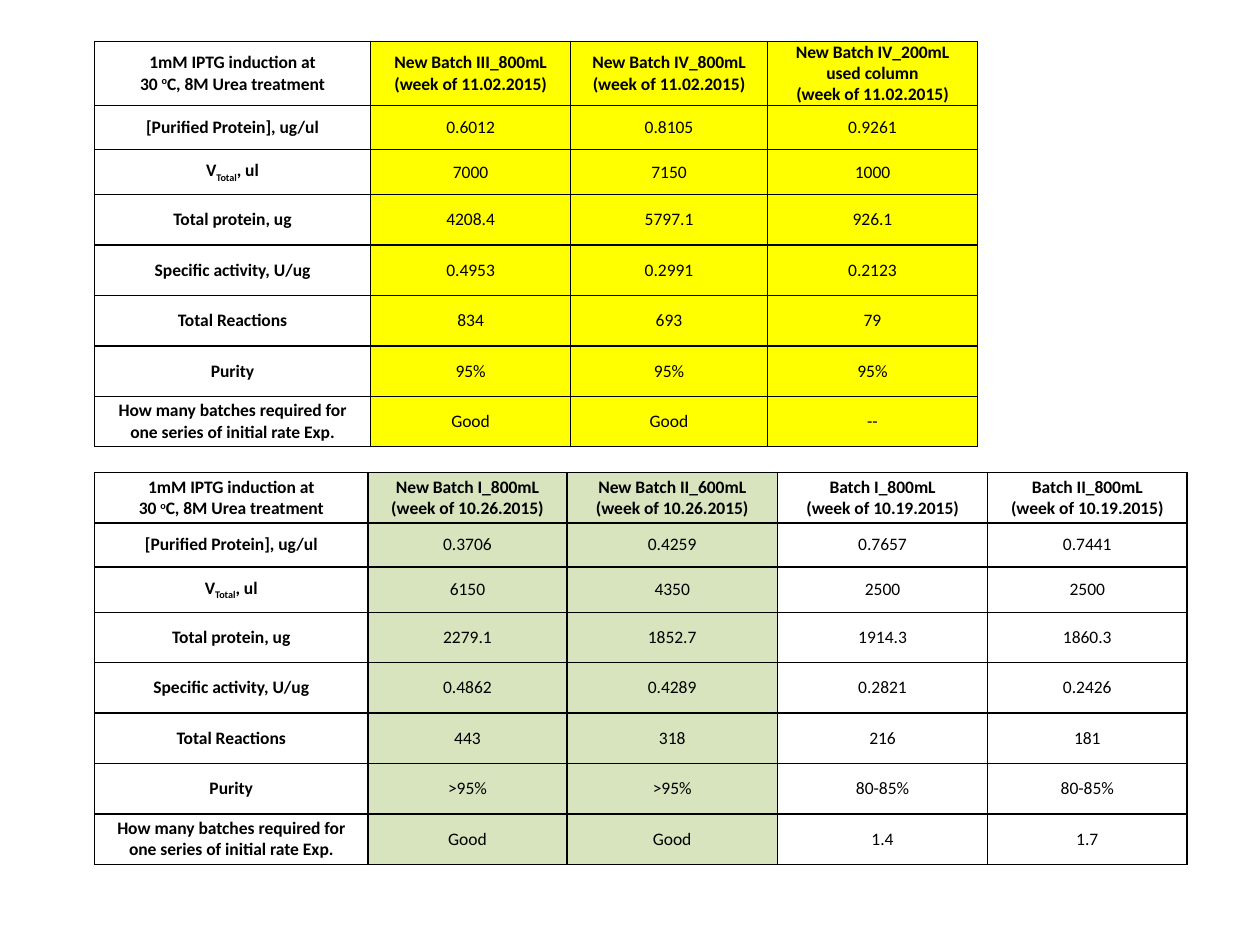
from dataclasses import dataclass

from lxml.etree import SubElement as Sub
from pptx import Presentation as Deck
from pptx.dml.color import RGBColor as Color
from pptx.enum.text import MSO_ANCHOR as Anchor, PP_ALIGN as Align
from pptx.oxml.ns import qn
from pptx.util import Inches, Pt


@dataclass(frozen=True)
class Theme:
    font: str = "Calibri"
    size: int = 10
    ink: str = "000000"
    new: str = "FFFF00"
    good: str = "D7E4BD"
    line: int = 1


def put(frame, text, theme, bold=False):
    lines = text if isinstance(text, list) else text.split("\n")
    for num, line in enumerate(lines):
        para = frame.add_paragraph() if num else frame.paragraphs[0]
        para.alignment = Align.CENTER
        parts = [(line, 0)] if isinstance(line, str) else line
        for word, base in parts:
            run = para.add_run()
            run.text = word
            font = run.font
            font.name, font.size, font.bold = theme.font, Pt(theme.size), bold
            font.color.rgb = Color.from_string(theme.ink)
            if base:
                run._r.get_or_add_rPr().set("baseline", str(base * 1000))


class Page:
    def __init__(self, slide, theme):
        self.slide = slide
        self.theme = theme

    def edge(self, cell):
        props = cell._tc.get_or_add_tcPr()
        for side in ("a:lnL", "a:lnR", "a:lnT", "a:lnB"):
            line = Sub(props, qn(side), w=str(Pt(self.theme.line)))
            fill = Sub(line, qn("a:solidFill"))
            Sub(fill, qn("a:srgbClr"), val=self.theme.ink)

    def cell(self, cell, text, bold, fill):
        cell.margin_left = cell.margin_right = 0
        cell.margin_top = cell.margin_bottom = 0
        cell.vertical_anchor = Anchor.MIDDLE
        put(cell.text_frame, text, self.theme, bold=bold)
        self.edge(cell)
        if fill:
            cell.fill.solid()
            cell.fill.fore_color.rgb = Color.from_string(fill)
        else:
            cell.fill.background()

    def table(self, top, high, wide, tall, data, fills):
        frame = self.slide.shapes.add_table(
            len(data), len(wide), Inches(0.75), Inches(top),
            Inches(sum(wide)), Inches(high))
        grid = frame.table
        grid.first_row = grid.horz_banding = False
        for col, width in zip(grid.columns, wide):
            col.width = Inches(width)
        for row, height in zip(grid.rows, tall):
            row.height = Inches(height)
        frame.height = Inches(high)
        for r, row in enumerate(data):
            for c, text in enumerate(row):
                self.cell(grid.cell(r, c), text, r == 0 or c == 0, fills[c])


LABELS = [
    ["1mM IPTG induction at", [("30 ", 0), ("o", 30), ("C, 8M Urea treatment", 0)]],
    "[Purified Protein], ug/ul",
    [[("V", 0), ("Total", -25), (", ul", 0)]],
    "Total protein, ug",
    "Specific activity, U/ug",
    "Total Reactions",
    "Purity",
    "How many batches required for\none series of initial rate Exp.",
]
TALL = [0.4, 0.35, 0.36] + [0.4] * 5

LATE = [
    ["New Batch III_800mL\n(week of 11.02.2015)", "0.6012", "7000", "4208.4",
     "0.4953", "834", "95%", "Good"],
    ["New Batch IV_800mL\n(week of 11.02.2015)", "0.8105", "7150", "5797.1",
     "0.2991", "693", "95%", "Good"],
    ["New Batch IV_200mL\nused column\n(week of 11.02.2015)", "0.9261", "1000",
     "926.1", "0.2123", "79", "95%", "--"],
]
PRIOR = [
    ["New Batch I_800mL\n(week of 10.26.2015)", "0.3706", "6150", "2279.1",
     "0.4862", "443", ">95%", "Good"],
    ["New Batch II_600mL\n(week of 10.26.2015)", "0.4259", "4350", "1852.7",
     "0.4289", "318", ">95%", "Good"],
    ["Batch I_800mL\n(week of 10.19.2015)", "0.7657", "2500", "1914.3",
     "0.2821", "216", "80-85%", "1.4"],
    ["Batch II_800mL\n(week of 10.19.2015)", "0.7441", "2500", "1860.3",
     "0.2426", "181", "80-85%", "1.7"],
]


def main():
    deck = Deck()
    deck.slide_width, deck.slide_height = Inches(10), Inches(7.5)
    theme = Theme()
    page = Page(deck.slides.add_slide(deck.slide_layouts[6]), theme)
    page.table(0.33, 3.22, [2.19, 1.59, 1.56, 1.67], TALL,
               list(zip(LABELS, *LATE)), [None] + [theme.new] * 3)
    page.table(3.75, 3.12, [2.17, 1.58, 1.67, 1.67, 1.58], TALL,
               list(zip(LABELS, *PRIOR)),
               [None] + [theme.good] * 2 + [None] * 2)
    deck.save("out.pptx")


if __name__ == "__main__":
    main()
